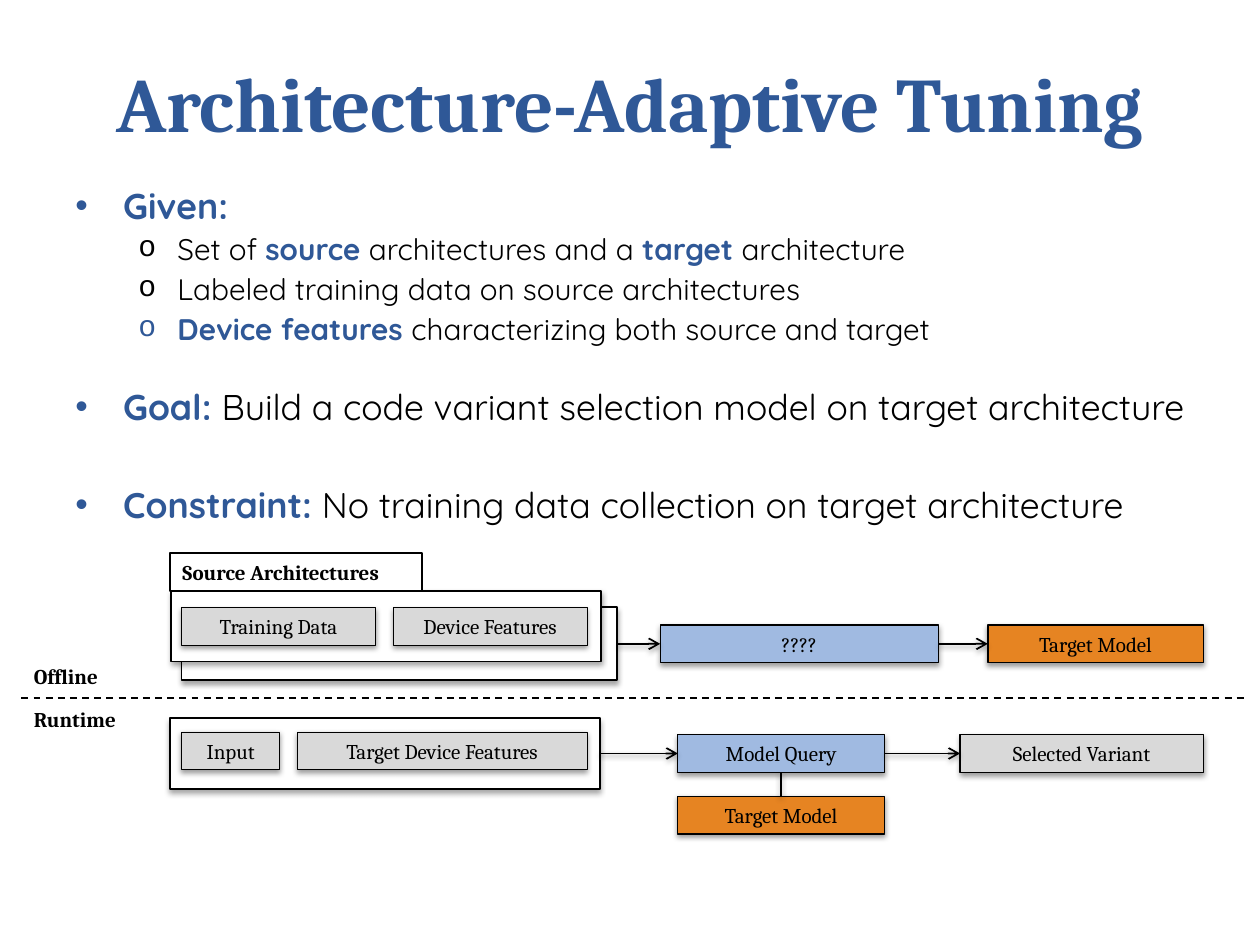
from lxml.etree import SubElement
from pptx import Presentation
from pptx.dml.color import RGBColor
from pptx.enum.dml import MSO_LINE
from pptx.enum.shapes import MSO_CONNECTOR, MSO_SHAPE
from pptx.enum.text import MSO_ANCHOR, PP_ALIGN
from pptx.oxml.ns import qn
from pptx.util import Inches, Pt

BLACK = RGBColor(0x00, 0x00, 0x00)
WHITE = RGBColor(0xFF, 0xFF, 0xFF)
NAVY = RGBColor(0x2F, 0x58, 0x97)
BLUE = RGBColor(0xA0, 0xBA, 0xE1)
AMBER = RGBColor(0xE6, 0x84, 0x22)
GREY = RGBColor(0xD9, 0xD9, 0xD9)

SERIF, SANS = "Cambria", "Quicksand"
TOP, LEFT, BASE, RIGHT = range(4)
ROW = 0.3  # height of every labelled box

# Bullet style per level: margin, hang, mark, mark font, text size
LEVELS = [
    (0.38, 0.38, "•", "Arial", 20.4),
    (0.81, 0.31, "o", "Courier New", 17),
]


class Deck:
    """Holds the style and the current slide."""

    def __init__(self, slide):
        self.shapes = slide.shapes

    def font(self, font, size, color, bold=False, name=SERIF):
        font.name, font.size, font.bold = name, Pt(size), bold
        font.color.rgb = color

    def shade(self, effects, alpha=38, drop=1.6):
        outer = SubElement(effects, qn("a:outerShdw"), blurRad=str(Pt(3.1)),
                           dist=str(Pt(drop)), dir="5400000", rotWithShape="0")
        color = SubElement(outer, qn("a:srgbClr"), val=str(BLACK))
        SubElement(color, qn("a:alpha"), val=str(alpha * 1000))

    def text(self, x, y, w, h, text="", size=12, color=BLACK, bold=True):
        box = self.shapes.add_textbox(Inches(x), Inches(y), Inches(w), Inches(h))
        frame = box.text_frame
        frame.word_wrap = True
        para = frame.paragraphs[0]
        para.text = text
        self.font(para.font, size, color, bold)
        return frame

    def title(self, text):
        frame = self.text(0.5, 0, 9, 1.22, text, 44, NAVY)
        frame.vertical_anchor = MSO_ANCHOR.BOTTOM
        para = frame.paragraphs[0]
        para.alignment, para.line_spacing = PP_ALIGN.CENTER, Pt(58)

    def bullets(self, x, y, w, h, items):
        """Each item is level, space before and (text, is key) parts."""
        box = self.shapes.add_textbox(Inches(x), Inches(y), Inches(w), Inches(h))
        frame = box.text_frame
        frame.word_wrap = True
        frame.margin_right = Inches(0.05)
        for i, (level, gap, parts) in enumerate(items):
            para = frame.add_paragraph() if i else frame.paragraphs[0]
            para.level, para.space_before = level, Pt(gap)
            margin, hang, mark, face, size = LEVELS[level]
            props = para._p.get_or_add_pPr()
            props.set("marL", str(Inches(margin)))
            props.set("indent", str(-Inches(hang)))
            tint = NAVY if parts[0][1] else BLACK
            SubElement(SubElement(props, qn("a:buClr")), qn("a:srgbClr"), val=str(tint))
            SubElement(props, qn("a:buFont"), typeface=face)
            SubElement(props, qn("a:buChar"), char=mark)
            for words, key in parts:
                run = para.add_run()
                run.text = words
                self.font(run.font, size, NAVY if key else BLACK, key, SANS)

    def rect(self, x, y, w, h, fill, line):
        box = self.shapes.add_shape(MSO_SHAPE.RECTANGLE, Inches(x), Inches(y),
                                    Inches(w), Inches(h))
        box.shadow.inherit = False
        box.fill.solid()
        box.fill.fore_color.rgb = fill
        box.line.color.rgb, box.line.width = BLACK, Pt(line)
        return box

    def panel(self, x, y, w, h):
        box = self.rect(x, y, w, h, WHITE, 1)
        self.shade(box._element.spPr.find(qn("a:effectLst")), 35, 1.8)
        return box

    def label(self, box, text, bold=False, align=PP_ALIGN.CENTER):
        frame = box.text_frame
        frame.word_wrap = True
        frame.vertical_anchor = MSO_ANCHOR.MIDDLE
        para = frame.paragraphs[0]
        para.text, para.alignment = text, align
        self.font(para.font, 12, BLACK, bold)

    def node(self, x, y, w, text, fill, line=0.75):
        box = self.rect(x, y, w, ROW, fill, line)
        self.shade(box._element.spPr.find(qn("a:effectLst")))
        self.label(box, text)
        return box

    def tab(self, x, y, w, text):
        self.label(self.rect(x, y, w, ROW, WHITE, 1), text, True, PP_ALIGN.LEFT)

    def line(self, x1=0, y1=0, x2=0, y2=0):
        line = self.shapes.add_connector(MSO_CONNECTOR.STRAIGHT, Inches(x1),
                                         Inches(y1), Inches(x2), Inches(y2))
        line.line.color.rgb, line.line.width = BLACK, Pt(1)
        SubElement(line._element.spPr, qn("a:effectLst"))
        return line

    def link(self, start, end, sides=(RIGHT, LEFT), arrow=True):
        line = self.line()
        line.begin_connect(start, sides[0])
        line.end_connect(end, sides[1])
        self.shade(line._element.spPr.find(qn("a:effectLst")))
        if arrow:
            SubElement(line.line._get_or_add_ln(), qn("a:tailEnd"), type="arrow")


def main():
    prs = Presentation()
    prs.slide_width, prs.slide_height = Inches(10), Inches(7.5)
    deck = Deck(prs.slides.add_slide(prs.slide_layouts[6]))

    # Title and bullets
    deck.title("Architecture-Adaptive Tuning")
    deck.bullets(0.5, 1.41, 9, 2.84, [
        (0, 0, [("Given:", True)]),
        (1, 2.4, [("Set of ", False), ("source ", True),
                  ("architectures and a ", False), ("target ", True),
                  ("architecture", False)]),
        (1, 2.4, [("Labeled training data on source architectures", False)]),
        (1, 2.4, [("Device features ", True),
                  ("characterizing both source and target", False)]),
        (0, 22, [("Goal: ", True),
                 ("Build a code variant selection model on target architecture", False)]),
        (0, 31.6, [("Constraint: ", True),
                   ("No training data collection on target architecture", False)]),
    ])

    # Offline flow
    back = deck.panel(1.44, 4.82, 3.46, 0.58)
    deck.panel(1.36, 4.69, 3.41, 0.56)
    deck.node(1.44, 4.82, 1.54, "Training Data", GREY, 0.5)
    deck.node(3.12, 4.82, 1.54, "Device Features", GREY, 0.5)
    deck.tab(1.35, 4.39, 2, "Source Architectures")
    learn = deck.node(5.24, 4.96, 2.21, "????", BLUE)
    model = deck.node(7.84, 4.96, 1.71, "Target Model", AMBER)
    deck.link(back, learn)
    deck.link(learn, model)

    # Divider between the phases
    deck.line(0.17, 5.54, 9.9, 5.54).line.dash_style = MSO_LINE.DASH
    deck.text(0.17, 5.22, 1.43, ROW, "Offline")
    deck.text(0.17, 5.56, 1.43, ROW, "Runtime")

    # Runtime flow
    data = deck.panel(1.35, 5.7, 3.41, 0.56)
    deck.node(1.44, 5.81, 0.78, "Input", GREY, 0.5)
    deck.node(2.36, 5.81, 2.3, "Target Device Features", GREY, 0.5)
    query = deck.node(5.38, 5.83, 1.64, "Model Query", BLUE)
    pick = deck.node(7.62, 5.83, 1.93, "Selected Variant", GREY)
    store = deck.node(5.38, 6.32, 1.64, "Target Model", AMBER)
    deck.link(data, query)
    deck.link(query, pick)
    deck.link(query, store, (BASE, TOP), arrow=False)

    prs.save("out.pptx")


if __name__ == "__main__":
    main()
